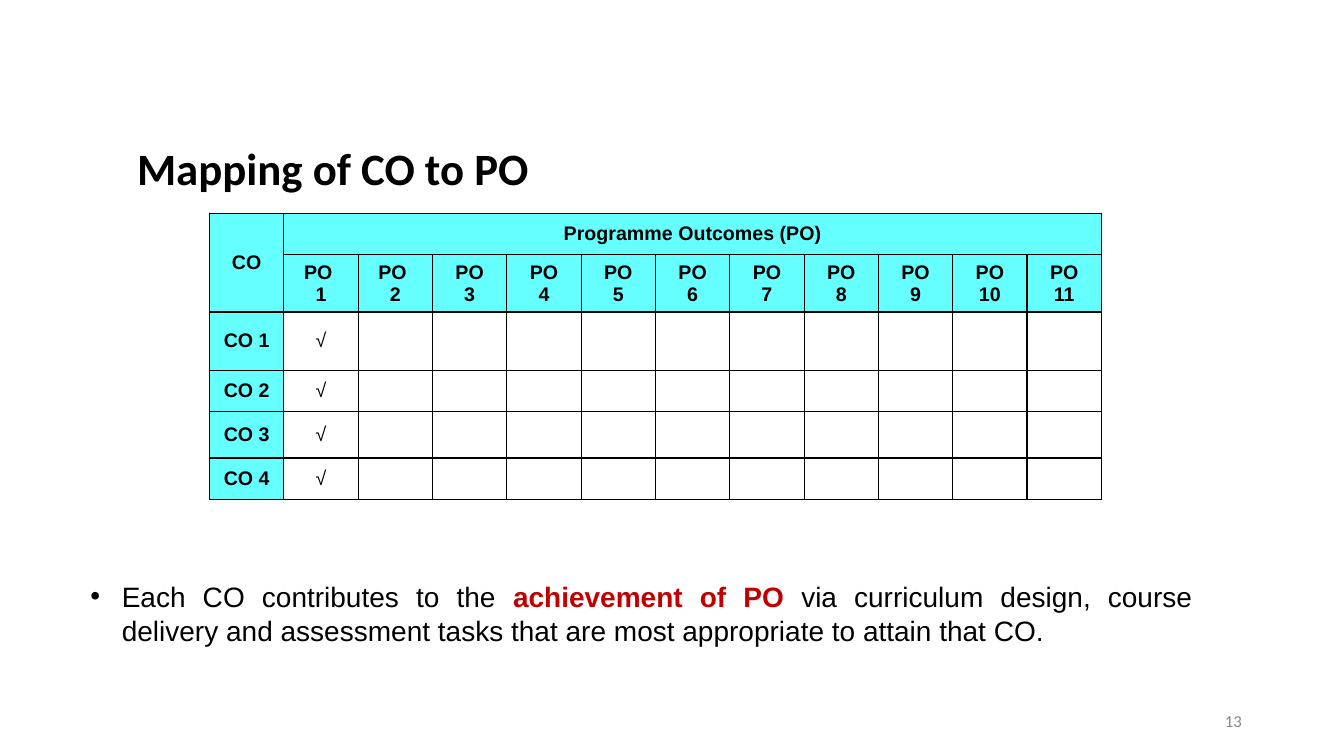
from dataclasses import dataclass

import pptx
import pptx.dml.color
import pptx.enum.text
import pptx.oxml
import pptx.oxml.ns
import pptx.util
from pptx.enum.text import MSO_ANCHOR, MSO_AUTO_SIZE, PP_ALIGN
from pptx.util import Cm


@dataclass(frozen=True)
class Theme:
    ink: str = "000000"
    accent: str = "C00000"
    muted: str = "888888"
    header: str = "66FFFF"
    heading_font: str = "Calibri"
    body_font: str = "Arial"
    title_size: int = 32
    body_size: int = 20
    table_size: int = 14
    number_size: int = 12
    border_width: int = 1


@dataclass(frozen=True)
class Span:
    text: str
    size: int
    font: str
    color: str
    bold: bool = False


@dataclass(frozen=True)
class Cell:
    row: int
    column: int
    lines: tuple[str, ...] = ()
    header: bool = True


THEME = Theme()
OUTCOME_COUNT = 11
ROW_HEIGHTS = (1.04, 1.04, 1.47, 1.04, 1.17, 1.04)
FIRST_CO_ROW = 2
TABLE_WIDTH = 22.48


def add_span(para, span: Span) -> None:
    run = para.add_run()
    run.text = span.text
    run.font.size = pptx.util.Pt(span.size)
    run.font.name = span.font
    run.font.bold = span.bold
    run.font.color.rgb = pptx.dml.color.RGBColor.from_string(span.color)


def place(box, left: float, top: float, width: float, height: float) -> None:
    box.left, box.top = Cm(left), Cm(top)
    box.width, box.height = Cm(width), Cm(height)


def add_bullet(para, indent: int) -> None:
    properties = para._p.get_or_add_pPr()
    properties.set("marL", str(indent))
    properties.set("indent", str(-indent))
    namespace = pptx.oxml.ns.nsdecls("a")
    for xml in (
        f'<a:buClr {namespace}><a:srgbClr val="{THEME.ink}"/></a:buClr>',
        f'<a:buFont {namespace} typeface="{THEME.body_font}"/>',
        f'<a:buChar {namespace} char="•"/>',
    ):
        properties.append(pptx.oxml.parse_xml(xml))


def add_borders(table_cell) -> None:
    properties = table_cell._tc.get_or_add_tcPr()
    width = pptx.util.Pt(THEME.border_width)
    for side in ("lnL", "lnR", "lnT", "lnB"):
        properties.append(pptx.oxml.parse_xml(
            f'<a:{side} {pptx.oxml.ns.nsdecls("a")} w="{width}"><a:solidFill>'
            f'<a:srgbClr val="{THEME.ink}"/></a:solidFill></a:{side}>'
        ))


def fill_cell(table, cell: Cell) -> None:
    table_cell = table.cell(cell.row, cell.column)
    table_cell.vertical_anchor = MSO_ANCHOR.MIDDLE
    if cell.header:
        table_cell.fill.solid()
        table_cell.fill.fore_color.rgb = pptx.dml.color.RGBColor.from_string(THEME.header)
    frame = table_cell.text_frame
    for index, line in enumerate(cell.lines):
        para = frame.add_paragraph() if index else frame.paragraphs[0]
        para.alignment = PP_ALIGN.CENTER
        add_span(para, Span(line, THEME.table_size, THEME.body_font, THEME.ink, cell.header))


def mapping_cells() -> list[Cell]:
    cells = [Cell(0, 0, ("CO",)), Cell(0, 1, ("Programme Outcomes (PO)",))]
    for number in range(1, OUTCOME_COUNT + 1):
        label = "PO " if number <= 2 else "PO"
        cells.append(Cell(1, number, (label, str(number))))
    for number, row in enumerate(range(FIRST_CO_ROW, len(ROW_HEIGHTS)), start=1):
        cells.append(Cell(row, 0, (f"CO {number}",)))
        cells.append(Cell(row, 1, ("√",), header=False))
    return cells


def add_title(page) -> None:
    title = page.shapes.title
    place(title, 3.2, 3.28, 25.83, 2.08)
    frame = title.text_frame
    frame.word_wrap = True
    frame.auto_size = MSO_AUTO_SIZE.NONE
    frame.vertical_anchor = MSO_ANCHOR.MIDDLE
    para = frame.paragraphs[0]
    para.alignment = PP_ALIGN.LEFT
    para.line_spacing = 0.9
    add_span(para, Span("Mapping of CO to PO", THEME.title_size,
                        THEME.heading_font, THEME.ink, True))


def add_mapping_table(page) -> None:
    column_count = OUTCOME_COUNT + 1
    table = page.shapes.add_table(
        len(ROW_HEIGHTS), column_count,
        Cm(5.28), Cm(5.38), Cm(TABLE_WIDTH), Cm(sum(ROW_HEIGHTS)),
    ).table
    table.first_row = False
    table.horz_banding = False
    for column in table.columns:
        column.width = Cm(TABLE_WIDTH / column_count)
    for row, height in zip(table.rows, ROW_HEIGHTS):
        row.height = Cm(height)
    for table_cell in table.iter_cells():
        add_borders(table_cell)
        table_cell.fill.background()
    table.cell(0, 0).merge(table.cell(1, 0))
    table.cell(0, 1).merge(table.cell(0, OUTCOME_COUNT))
    for cell in mapping_cells():
        fill_cell(table, cell)


def add_explanation(page) -> None:
    box = page.shapes.add_textbox(Cm(2.03), Cm(14.48), Cm(28.27), Cm(1.96))
    frame = box.text_frame
    frame.word_wrap = True
    frame.auto_size = MSO_AUTO_SIZE.SHAPE_TO_FIT_TEXT
    para = frame.paragraphs[0]
    para.alignment = PP_ALIGN.JUSTIFY
    add_bullet(para, Cm(0.79))
    size, font = THEME.body_size, THEME.body_font
    for span in (
        Span("Each CO contributes to the ", size, font, THEME.ink),
        Span("achievement of PO", size, font, THEME.accent, True),
        Span(" via curriculum design, course delivery and assessment tasks "
             "that are most appropriate to attain that CO.", size, font, THEME.ink),
    ):
        add_span(para, span)


def add_page_number(page) -> None:
    box = page.shapes.add_textbox(Cm(23.93), Cm(17.65), Cm(7.62), Cm(1.02))
    frame = box.text_frame
    frame.word_wrap = True
    frame.vertical_anchor = MSO_ANCHOR.MIDDLE
    para = frame.paragraphs[0]
    para.alignment = PP_ALIGN.RIGHT
    add_span(para, Span("13", THEME.number_size, THEME.heading_font, THEME.muted))


def main() -> None:
    deck = pptx.Presentation()
    deck.slide_width, deck.slide_height = Cm(33.87), Cm(19.05)
    page = deck.slides.add_slide(deck.slide_layouts.get_by_name("Title Only"))
    add_title(page)
    add_explanation(page)
    add_mapping_table(page)
    add_page_number(page)
    deck.save("out.pptx")


if __name__ == "__main__":
    main()
